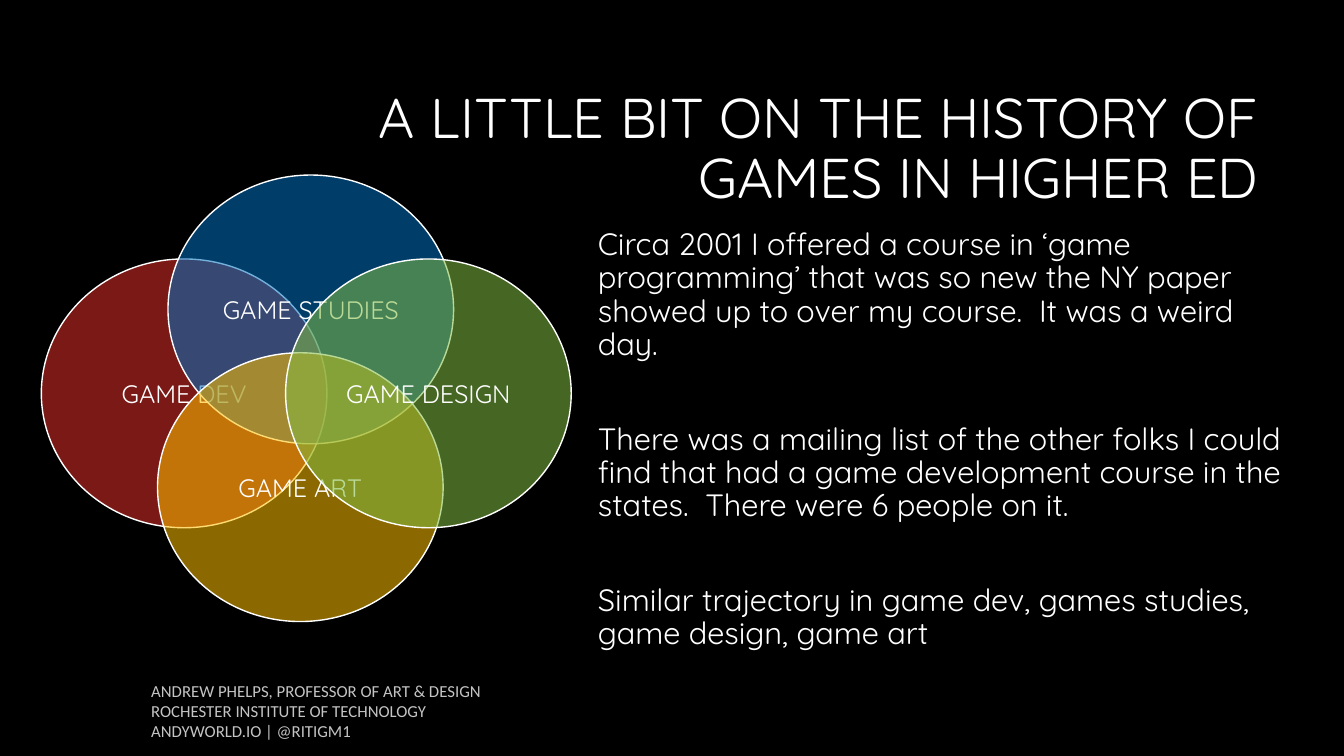
"""Build a slide on the history of games in higher education with a four-circle Venn diagram."""
from lxml.etree import SubElement
from pptx import Presentation
from pptx.dml.color import RGBColor
from pptx.enum.shapes import MSO_SHAPE
from pptx.enum.text import MSO_ANCHOR, MSO_AUTO_SIZE, PP_ALIGN
from pptx.oxml.ns import qn
from pptx.util import Pt

BLACK = RGBColor(0x00, 0x00, 0x00)
WHITE = RGBColor(0xFF, 0xFF, 0xFF)
GRAY = RGBColor(0xC4, 0xC4, 0xC4)
RED = RGBColor(0xDF, 0x2E, 0x28)
BLUE = RGBColor(0x00, 0x70, 0xC0)
GOLD = RGBColor(0xFF, 0xC0, 0x00)
GREEN = RGBColor(0x81, 0xBB, 0x42)


def write(box, *lines, size, font="Quicksand", color=WHITE, align=PP_ALIGN.LEFT,
          anchor=MSO_ANCHOR.TOP, spacing=1.0, gap=0):
    frame = box.text_frame
    frame.word_wrap = True
    frame.auto_size = MSO_AUTO_SIZE.NONE
    frame.vertical_anchor = anchor
    for index, line in enumerate(lines):
        para = frame.add_paragraph() if index else frame.paragraphs[0]
        para.alignment = align
        para.line_spacing = spacing
        para.space_before = Pt(gap if index else 0)
        span = para.add_run()
        span.text = line
        span.font.name = font
        span.font.size = Pt(size)
        span.font.color.rgb = color


deck = Presentation()
deck.slide_width, deck.slide_height = Pt(960), Pt(540)
page = deck.slides.add_slide(deck.slide_layouts[5])
page.background.fill.solid()
page.background.fill.fore_color.rgb = BLACK

title = page.shapes.title
title.left, title.top, title.width, title.height = Pt(228), Pt(60.5), Pt(678), Pt(101.5)
write(title, "A LITTLE BIT ON THE HISTORY OF GAMES IN HIGHER ED",
      size=40, align=PP_ALIGN.RIGHT, spacing=0.9)

footer = page.shapes.add_textbox(Pt(108), Pt(486), Pt(522), Pt(36))
frame = footer.text_frame
frame.margin_left = frame.margin_top = frame.margin_right = frame.margin_bottom = 0
write(footer, "ANDREW PHELPS, PROFESSOR OF ART & DESIGN", "ROCHESTER INSTITUTE OF TECHNOLOGY",
      "ANDYWORLD.IO | @RITIGM1", size=12, font="Calibri", color=GRAY)

story = page.shapes.add_textbox(Pt(420), Pt(160), Pt(516), Pt(314))
write(story,
      "Circa 2001 I offered a course in ‘game programming’ that was so new the NY paper "
      "showed up to over my course.  It was a weird day.",
      "There was a mailing list of the other folks I could find that had a game development "
      "course in the states.  There were 6 people on it.",
      "Similar trajectory in game dev, games studies, game design, game art",
      size=22, spacing=0.9, gap=44)

circles = [
    ("GAME DEV", 29.5, 185, RED),
    ("GAME STUDIES", 120, 125, BLUE),
    ("GAME ART", 112.5, 252, GOLD),
    ("GAME DESIGN", 204, 185, GREEN),
]
for label, left, top, color in circles:
    circle = page.shapes.add_shape(MSO_SHAPE.OVAL, Pt(left), Pt(top), Pt(204), Pt(192))
    circle.shadow.inherit = False
    circle.fill.solid()
    circle.fill.fore_color.rgb = color
    tint = circle.fill._xPr.find(qn("a:solidFill"))[0]
    SubElement(tint, qn("a:alpha"), val="55000")
    circle.line.color.rgb = WHITE
    circle.line.width = Pt(1)
    write(circle, label, size=18, align=PP_ALIGN.CENTER, anchor=MSO_ANCHOR.MIDDLE)

deck.save("out.pptx")
